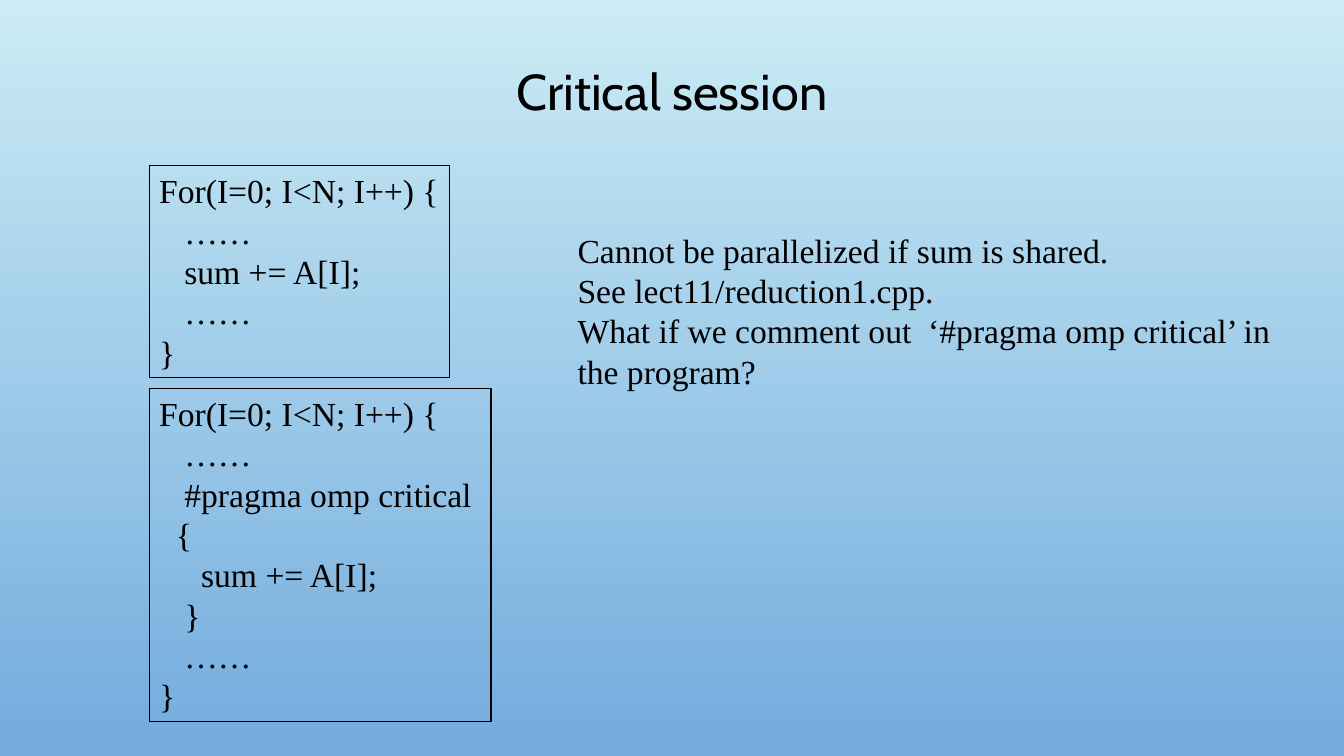
from pptx import Presentation
from pptx import util as u
from pptx.dml.color import RGBColor
from pptx.enum import shapes, text

BLACK = "000000"

LOOP = ["For(I=0; I<N; I++) {", "   ……", "   sum += A[I];", "   ……", "}"]
CRITICAL_LOOP = LOOP[:2] + [
    "   #pragma omp critical",
    "  {",
    "     sum += A[I];",
    "   }",
] + LOOP[3:]
REMARKS = [
    "Cannot be parallelized if sum is shared.",
    "See lect11/reduction1.cpp.",
    "What if we comment out  ‘#pragma omp critical’ in",
    "the program?",
]


def color(value):
    return RGBColor.from_string(value)


def write(shape, lines, font="Times New Roman", size=24, align=text.PP_ALIGN.LEFT,
          anchor=text.MSO_ANCHOR.TOP, spacing=None, wrap=False, grow=True):
    frame = shape.text_frame
    frame.word_wrap = wrap
    frame.vertical_anchor = anchor
    frame.auto_size = (text.MSO_AUTO_SIZE.SHAPE_TO_FIT_TEXT if grow
                       else text.MSO_AUTO_SIZE.NONE)
    for index, line in enumerate(lines):
        para = frame.add_paragraph() if index else frame.paragraphs[0]
        para.alignment = align
        para.line_spacing = spacing
        span = para.add_run()
        span.text = line
        span.font.name = font
        span.font.size = u.Pt(size)
        span.font.color.rgb = color(BLACK)


def add_background(page, top, bottom):
    fill = page.background.fill
    fill.gradient()
    fill.gradient_angle = 270
    for stop, position, value in zip(fill.gradient_stops, (0, 1), (top, bottom)):
        stop.position = position
        stop.color.rgb = color(value)


def add_title(page, box, title):
    shape = page.shapes.add_textbox(*map(u.Inches, box))
    write(shape, [title], font="Cabin", size=36, align=text.PP_ALIGN.CENTER,
          anchor=text.MSO_ANCHOR.MIDDLE, spacing=0.9, wrap=True, grow=False)


def add_code(page, box, lines):
    frame = page.shapes.add_shape(shapes.MSO_SHAPE.RECTANGLE, *map(u.Inches, box))
    frame.shadow.inherit = False
    frame.fill.background()
    frame.line.color.rgb = color(BLACK)
    frame.line.width = u.Pt(0.75)
    write(frame, lines)


def add_remarks(page, box, lines):
    write(page.shapes.add_textbox(*map(u.Inches, box)), lines)


def main():
    deck = Presentation()
    deck.slide_width, deck.slide_height = u.Inches(13.33), u.Inches(7.5)
    page = deck.slides.add_slide(deck.slide_layouts[6])

    add_background(page, "CBECF5", "73ABDD")
    add_title(page, (1, 0.32, 11.33, 1.23), "Critical session")

    # Plain loop, remarks beside it, protected loop below
    add_code(page, (1.48, 1.64, 2.98, 2.11), LOOP)
    add_remarks(page, (5.63, 2.23, 7.21, 1.72), REMARKS)
    add_code(page, (1.48, 3.85, 3.39, 3.31), CRITICAL_LOOP)

    deck.save("out.pptx")


if __name__ == "__main__":
    main()
